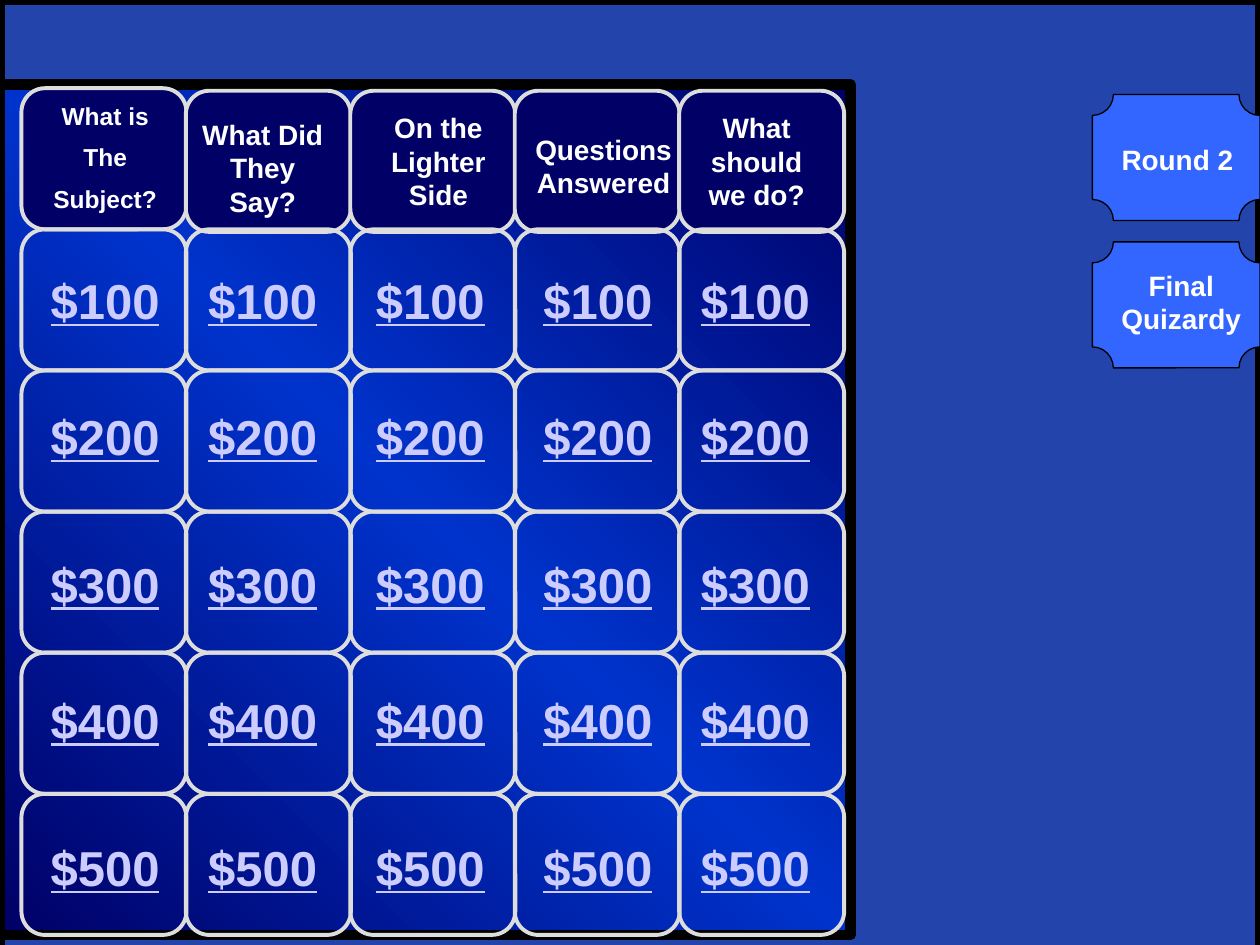
from dataclasses import dataclass

from lxml.etree import SubElement
from pptx import Presentation
from pptx.dml.color import RGBColor
from pptx.enum.shapes import MSO_SHAPE as SHAPE
from pptx.enum.text import MSO_AUTO_SIZE as AUTO, PP_ALIGN as ALIGN
from pptx.oxml.ns import qn
from pptx.util import Inches, Pt


@dataclass(frozen=True)
class Theme:
    font: str = "Arial"
    black: str = "000000"
    white: str = "FFFFFF"
    navy: str = "000066"
    band: str = "0033CC"
    blue: str = "3366FF"
    grid: str = "DDDDDD"
    amount: str = "CCCCFF"
    small: int = 14
    label: int = 16
    big: int = 28
    thin: float = 0.75
    cell: float = 2.25
    frame: float = 6


T = Theme()


def add_box(slide, kind, box, fill, line, width):
    """Add a preset shape; fill None leaves it open."""
    sp = slide.shapes.add_shape(kind, *map(Inches, box))
    sp.shadow.inherit = False
    if fill:
        sp.fill.solid()
        sp.fill.fore_color.rgb = RGBColor.from_string(fill)
    else:
        sp.fill.background()
    sp.line.color.rgb = RGBColor.from_string(line)
    sp.line.width = Pt(width)
    return sp


def add_label(slide, box, lines, size=T.label, color=T.white,
              underline=None, spaced=True, wrap=True):
    """Add centred bold text, one paragraph per line."""
    tf = slide.shapes.add_textbox(*map(Inches, box)).text_frame
    tf.word_wrap = wrap
    tf.auto_size = AUTO.SHAPE_TO_FIT_TEXT
    tf.text = "\n".join(lines)
    for p in tf.paragraphs:
        p.alignment = ALIGN.CENTER
        if spaced:
            p.space_before = Pt(size / 2)
        for r in p.runs:
            r.font.name = T.font
            r.font.size = Pt(size)
            r.font.bold = True
            r.font.underline = underline
            r.font.color.rgb = RGBColor.from_string(color)


def set_alpha(sp, percent):
    color = sp.fill._xPr.find(qn("a:solidFill"))[0]
    SubElement(color, qn("a:alpha"), val=str(percent * 1000))


def set_gradient(sp, stops, angle):
    sp.fill.gradient()
    grad = sp.fill._xPr.find(qn("a:gradFill"))
    for child in list(grad):
        grad.remove(child)
    gs_list = SubElement(grad, qn("a:gsLst"))
    for position, color in stops:
        gs = SubElement(gs_list, qn("a:gs"), pos=str(position * 1000))
        SubElement(gs, qn("a:srgbClr"), val=color)
    SubElement(grad, qn("a:lin"), ang=str(angle * 60000), scaled="1")


def add_backdrop(slide, left, top, width, height):
    add_box(slide, SHAPE.RECTANGLE, (left, top, width, height),
            T.black, T.black, T.thin)
    tint = add_box(slide, SHAPE.RECTANGLE, (left, top, width, height + 0.08),
                   T.blue, T.black, T.frame)
    set_alpha(tint, 67)


def add_board(slide, left, top, width, height):
    cell_w, cell_h, pitch = 1.31, 1.12, 1.305
    cell_lefts = [left + 0.17 + pitch * i for i in range(5)]

    board = add_box(slide, SHAPE.RECTANGLE, (left, top, width, height),
                    T.navy, T.black, T.frame)
    set_gradient(board, [(0, T.navy), (50, T.band), (100, T.navy)], 315)

    # Category headings: offset in the board, lines, text options
    categories = [
        ((0.17, 0.08, 1.33, 1.04), ["What is", "The", "Subject?"],
         {"size": T.small}),
        ((1.5, 0.21, 1.17, 0.91), ["What Did", "They Say?"],
         {"spaced": False}),
        ((3, 0.16, 0.96, 0.91), ["On the", "Lighter", "Side"],
         {"spaced": False, "wrap": False}),
        ((4.08, 0.33, 1.42, 0.64), ["Questions Answered"], {}),
        ((5.42, 0.16, 1.17, 0.91), ["What should we do?"], {}),
    ]
    for i, x in enumerate(cell_lefts):
        y = top + (0.05 if i else 0.03)
        add_box(slide, SHAPE.ROUNDED_RECTANGLE, (x, y, cell_w, cell_h),
                T.navy, T.grid, T.cell)
    for (x, y, w, h), lines, options in categories:
        add_label(slide, (left + x, top + y, w, h), lines, **options)

    # Amounts, one row of cells per value
    label_lefts = [0.17, 1.42, 2.75, 4.08, 5.33]
    label_tops = [1.43, 2.51, 3.68, 4.76, 5.93]
    for row, label_top in enumerate(label_tops):
        y = top + 1.15 + cell_h * row
        for x, label_left in zip(cell_lefts, label_lefts):
            add_box(slide, SHAPE.ROUNDED_RECTANGLE, (x, y, cell_w, cell_h),
                    None, T.grid, T.cell)
            add_label(slide, (left + label_left, top + label_top, 1.33, 0.57),
                      [f"${(row + 1) * 100}"], T.big, T.amount, underline=True)


def add_round_button(slide, left, top, width, height, text, label):
    add_box(slide, SHAPE.PLAQUE, (left, top, width, height),
            T.blue, T.black, T.thin)
    x, y, w, h = label
    add_label(slide, (left + x, top + y, w, h), [text])


def main():
    prs = Presentation()
    prs.slide_width, prs.slide_height = Inches(10), Inches(7.5)
    slide = prs.slides.add_slide(prs.slide_layouts[6])

    add_backdrop(slide, 0, 0, 10, 7.5)
    add_board(slide, 0, 0.67, 6.75, 6.75)
    add_round_button(slide, 8.67, 0.75, 1.33, 1, "Round 2",
                     (-0.01, 0.33, 1.37, 0.37))
    add_round_button(slide, 8.67, 1.92, 1.33, 1, "Final Quizardy",
                     (0.08, 0.16, 1.25, 0.64))
    prs.save("out.pptx")


if __name__ == "__main__":
    main()
